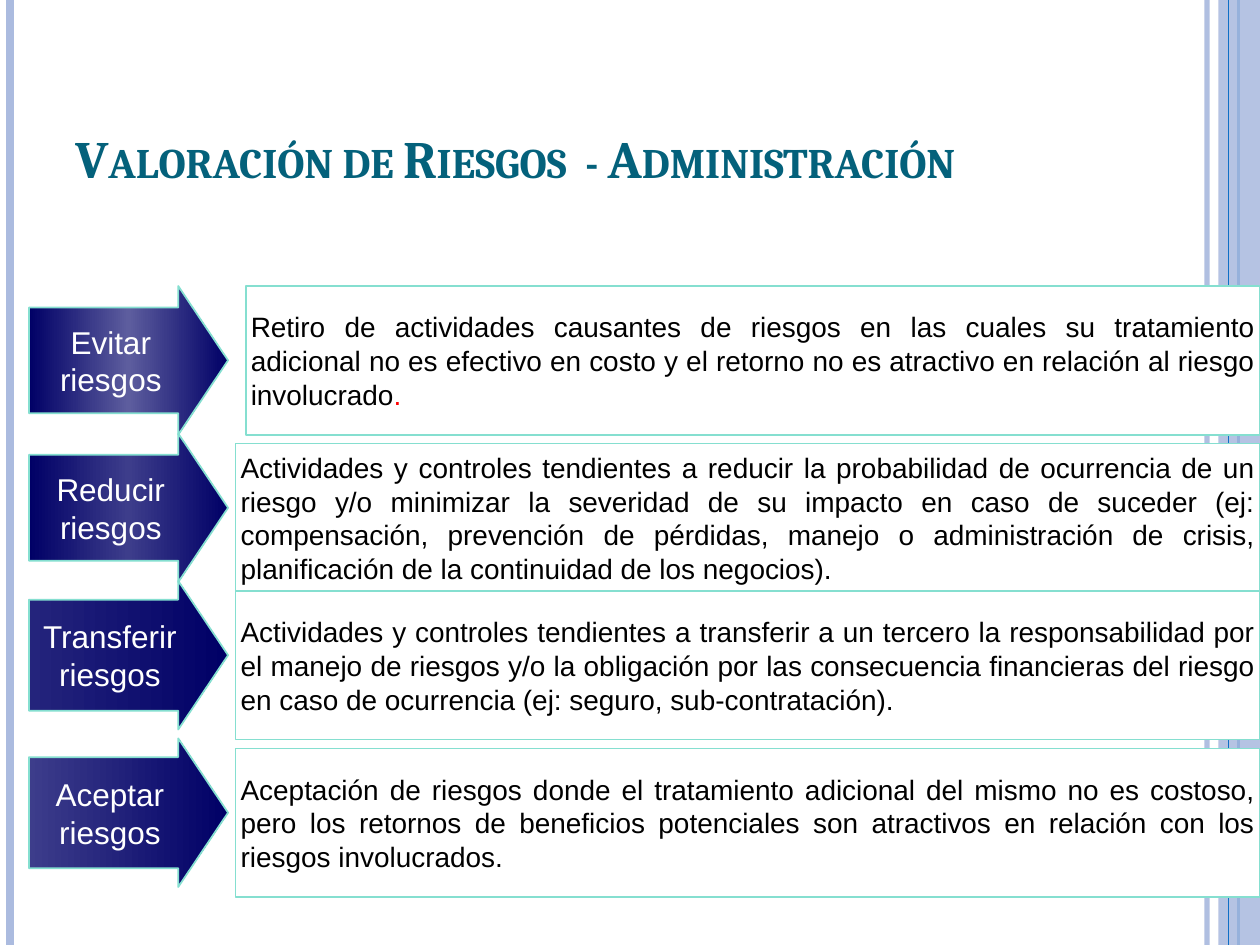
from copy import deepcopy

from lxml.etree import SubElement
from pptx import Presentation
from pptx.dml.color import RGBColor
from pptx.enum.shapes import MSO_CONNECTOR as Connector, MSO_SHAPE as Shape
from pptx.enum.text import MSO_ANCHOR as Anchor, PP_ALIGN as Align
from pptx.oxml.ns import qn
from pptx.util import Inches, Pt

PERIWINKLE = RGBColor(0xAB, 0xBB, 0xDF)
BLUE = RGBColor(0x0F, 0x6F, 0xC6)
TEAL = RGBColor(0x04, 0x61, 0x7B)
AQUA = RGBColor(0x85, 0xDF, 0xD0)
NAVY = RGBColor(0x00, 0x00, 0x66)
INDIGO = RGBColor(0x24, 0x24, 0x7C)
VIOLET = RGBColor(0x3D, 0x3D, 0x8B)
LAVENDER = RGBColor(0x5D, 0x5D, 0x9E)
WHITE = RGBColor(0xFF, 0xFF, 0xFF)
BLACK = RGBColor(0x00, 0x00, 0x00)
RED = RGBColor(0xFF, 0x00, 0x00)

ROW_HEIGHT = 1.18
ARROW_LEFT, ARROW_WIDTH = 0.23, 1.58
SLIDE_RIGHT = 10

# Arrow top, shaft thickness, gradient, label, box left, box top, description runs
RISKS = [
    (2.27, 0.712, [NAVY, LAVENDER, NAVY], "Evitar riesgos", 1.95, 2.27,
     [("Retiro de actividades causantes de riesgos en las cuales su tratamiento "
       "adicional no es efectivo en costo y el retorno no es atractivo en "
       "relación al riesgo involucrado", BLACK), (".", RED)]),
    (3.44, 0.712, [NAVY, VIOLET, NAVY], "Reducir riesgos", 1.87, 3.52,
     [("Actividades y controles tendientes a reducir la probabilidad de "
       "ocurrencia de un riesgo y/o minimizar la severidad de su impacto en caso "
       "de suceder (ej: compensación, prevención de pérdidas, manejo o "
       "administración de crisis, planificación de la continuidad de los "
       "negocios).", BLACK)]),
    (4.61, 0.747, [INDIGO, NAVY], "Transferir riesgos", 1.87, 4.69,
     [("Actividades y controles tendientes a transferir a un tercero la "
       "responsabilidad por el manejo de riesgos y/o la obligación por las "
       "consecuencia financieras del riesgo en caso de ocurrencia (ej: seguro, "
       "sub-contratación).", BLACK)]),
    (5.86, 0.747, [VIOLET, NAVY], "Aceptar riesgos", 1.87, 5.94,
     [("Aceptación de riesgos donde el tratamiento adicional del mismo no es "
       "costoso, pero los retornos de beneficios potenciales son atractivos en "
       "relación con los riesgos involucrados.", BLACK)]),
]


def set_all(target, formats):
    for name, value in formats.items():
        setattr(target, name, value)


def set_alpha(properties, percent):
    color = next(properties.iter(qn("a:srgbClr")))
    SubElement(color, qn("a:alpha")).set("val", str(percent * 1000))


def write_runs(shape, runs, align, size, font="Arial", bold=False):
    paragraph = shape.text_frame.paragraphs[0]
    paragraph.alignment = align
    for text, color in runs:
        run = paragraph.add_run()
        run.text = text
        set_all(run.font, {"name": font, "size": Pt(size), "bold": bold})
        run.font.color.rgb = color
    return paragraph


def add_rule(slide, x, color, width, alpha=None):
    rule = slide.shapes.add_connector(
        Connector.STRAIGHT, Inches(x), 0, Inches(x), Inches(7.5))
    rule.line.color.rgb = color
    rule.line.width = Pt(width)
    properties = rule._element.spPr
    if alpha:
        set_alpha(properties, alpha)
    SubElement(properties, qn("a:effectLst"))


def add_panel(slide, kind, left, top, width, height):
    panel = slide.shapes.add_shape(
        kind, Inches(left), Inches(top), Inches(width), Inches(height))
    panel.shadow.inherit = False
    return panel


def outline_for_text(panel):
    panel.line.color.rgb = AQUA
    panel.line.width = Pt(1)
    margins = {f"margin_{side}": Inches(0.04)
               for side in ("left", "top", "right", "bottom")}
    set_all(panel.text_frame, {
        "word_wrap": True, "vertical_anchor": Anchor.MIDDLE, **margins})


def fill_gradient(panel, colors):
    panel.fill.gradient()
    panel.fill.gradient_angle = 0
    stop_list = next(panel._element.spPr.iter(qn("a:gsLst")))
    for _ in colors[2:]:
        stop_list.append(deepcopy(stop_list[0]))
    for index, (stop, color) in enumerate(zip(panel.fill.gradient_stops, colors)):
        stop.position = index / (len(colors) - 1)
        stop.color.rgb = color


def add_side_bands(slide):
    add_rule(slide, 9.58, PERIWINKLE, 3, alpha=93)
    add_rule(slide, 0.08, PERIWINKLE, 4.5)
    add_rule(slide, 9.83, BLUE, 1.5)
    band = add_panel(slide, Shape.RECTANGLE, 9.67, 0, 0.33, 7.5)
    band.fill.solid()
    band.fill.fore_color.rgb = PERIWINKLE
    set_alpha(band._element.spPr, 87)
    band.line.fill.background()
    add_rule(slide, 9.75, BLUE, 0.75)


def add_title(slide, left, top, width, height):
    title = slide.shapes.add_textbox(
        Inches(left), Inches(top), Inches(width), Inches(height))
    set_all(title.text_frame, {"word_wrap": True, "vertical_anchor": Anchor.BOTTOM})
    heading = write_runs(title, [("Valoración de Riesgos  - Administración", TEAL)],
                         Align.LEFT, 30, "Cambria", True)
    heading.runs[0].font._element.set("cap", "small")


def add_arrow(slide, left, top, width, height, shaft, colors, label):
    arrow = add_panel(slide, Shape.RIGHT_ARROW, left, top, width, height)
    arrow.adjustments[0] = shaft
    arrow.adjustments[1] = 0.335
    fill_gradient(arrow, colors)
    outline_for_text(arrow)
    write_runs(arrow, [(label, WHITE)], Align.CENTER, 18)


def add_description(slide, left, top, width, height, runs):
    box = add_panel(slide, Shape.RECTANGLE, left, top, width, height)
    box.fill.solid()
    box.fill.fore_color.rgb = WHITE
    outline_for_text(box)
    write_runs(box, runs, Align.JUSTIFY, 16)


def main():
    deck = Presentation()
    deck.slide_width, deck.slide_height = Inches(10), Inches(7.5)
    slide = deck.slides.add_slide(deck.slide_layouts[6])

    add_side_bands(slide)
    add_title(slide, 0.5, 0.3, 8.17, 1.25)

    # One arrow and one description per risk response
    for arrow_top, shaft, colors, label, box_left, box_top, runs in RISKS:
        add_arrow(slide, ARROW_LEFT, arrow_top, ARROW_WIDTH, ROW_HEIGHT,
                  shaft, colors, label)
        add_description(slide, box_left, box_top, SLIDE_RIGHT - box_left,
                        ROW_HEIGHT, runs)

    deck.save("out.pptx")


if __name__ == "__main__":
    main()
